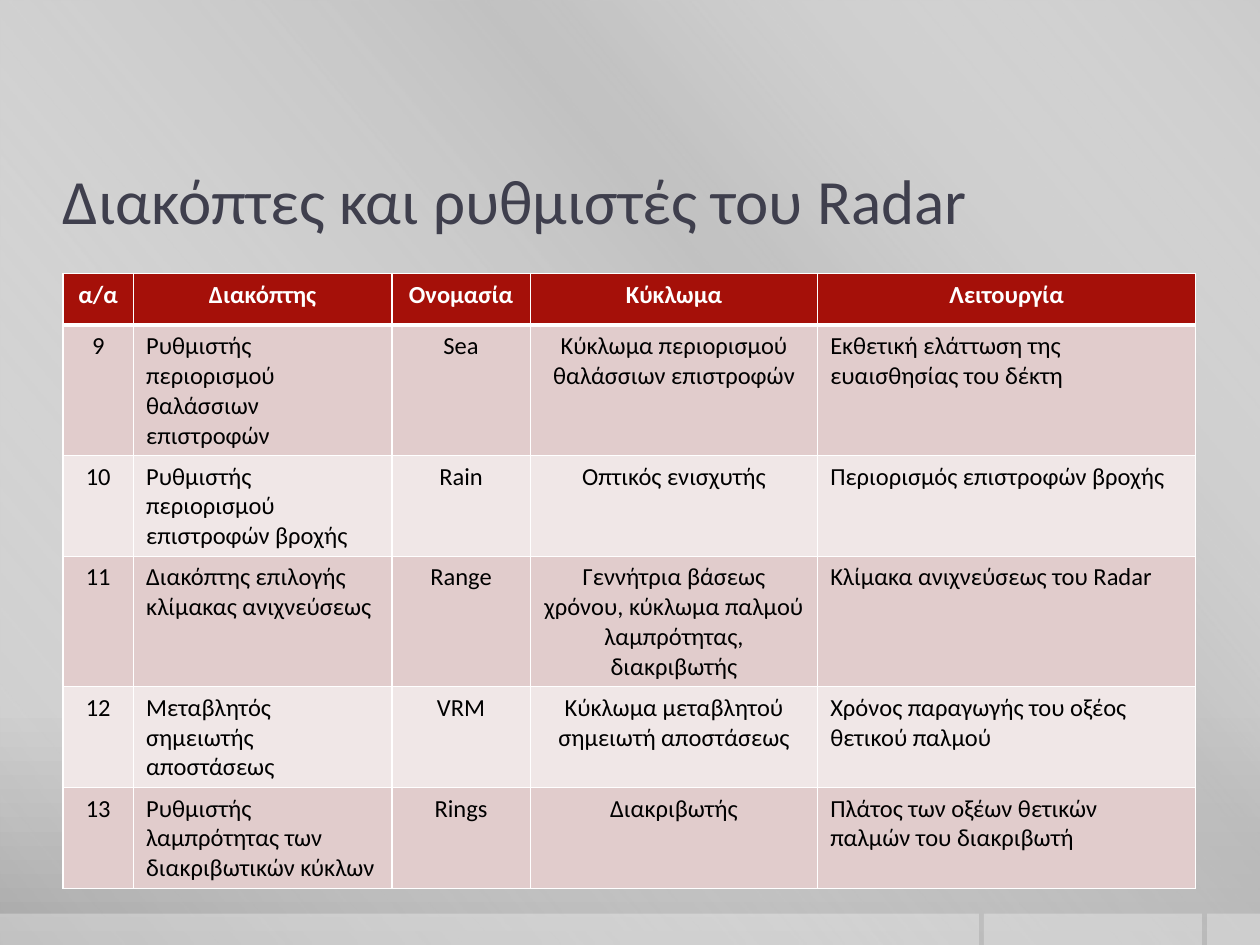
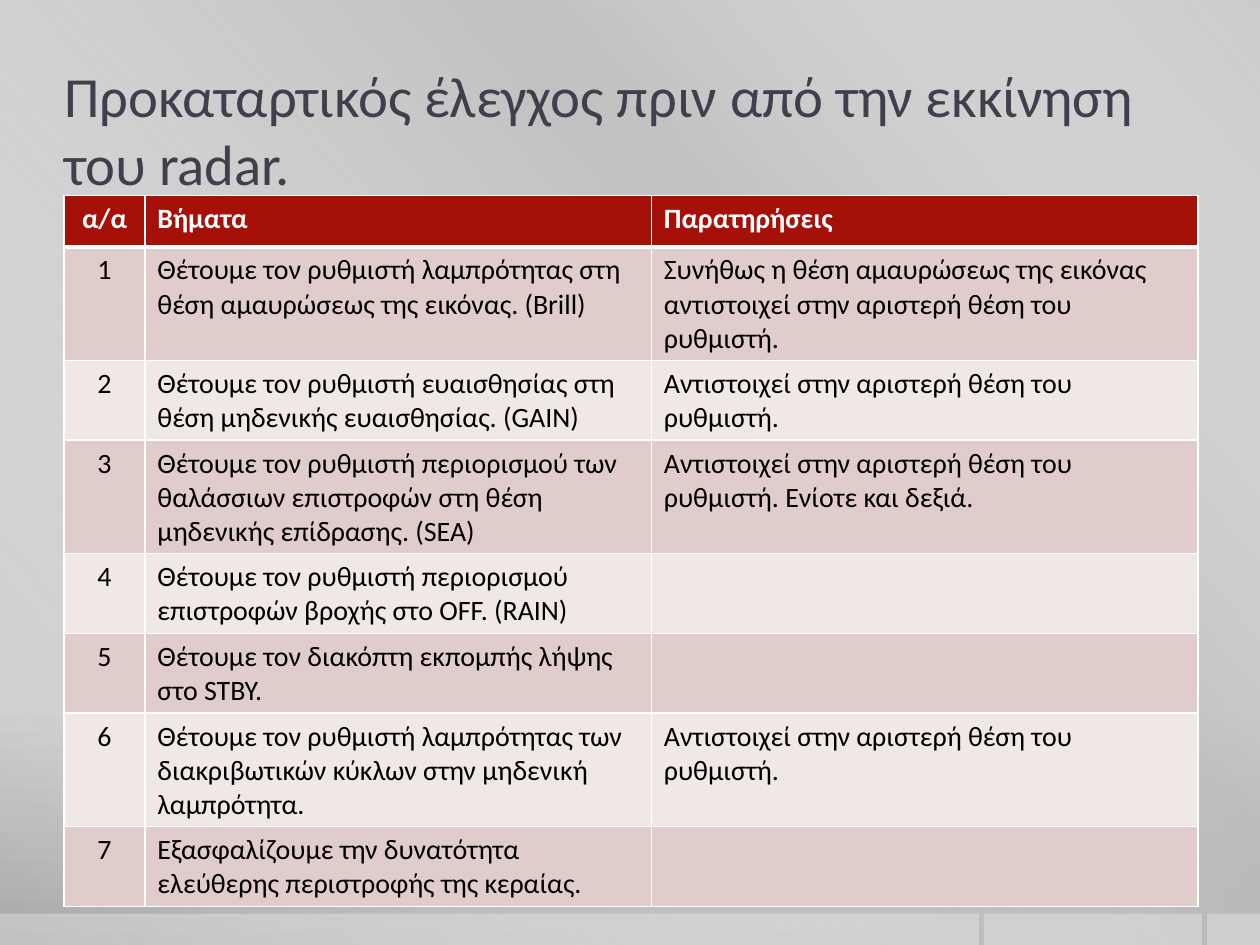
from lxml import etree
from pptx import Presentation
from pptx.dml.color import RGBColor
from pptx.enum.shapes import MSO_SHAPE
from pptx.enum.text import MSO_ANCHOR, PP_ALIGN
from pptx.oxml.ns import qn
from pptx.util import Inches, Pt

RECTANGLE = MSO_SHAPE.RECTANGLE
MIDDLE = MSO_ANCHOR.MIDDLE
LEFT, CENTER = PP_ALIGN.LEFT, PP_ALIGN.CENTER

FONT = "Calibri"
WHITE, BLACK = "FFFFFF", "000000"
TITLE_COLOR, HEADER_FILL = "3F3F4D", "A51009"
BAND_FILLS = ("E1CCCC", "F0E7E7")
BACKGROUND_STOPS = [(0, "CBCBCB", 100), (76, "C8C8C8", 100), (100, "A7A7A7", 100)]
SHEEN_STOPS = [(0, WHITE, 0), (34, "BFBFBF", 61), (38, "BFBFBF", 76), (100, WHITE, 0)]
FOOTER_BANDS = [(9.58, 0.42), (7.81, 1.73), (0, 7.77)]
ROW_HEIGHT = 0.41

SWITCH_ROWS = [
    ["α/α", "Διακόπτης", "Ονομασία", "Κύκλωμα", "Λειτουργία"],
    ["9", "Ρυθμιστής περιορισμού θαλάσσιων επιστροφών", "Sea",
     "Κύκλωμα περιορισμού θαλάσσιων επιστροφών",
     "Εκθετική ελάττωση της ευαισθησίας του δέκτη"],
    ["10", "Ρυθμιστής περιορισμού επιστροφών βροχής", "Rain",
     "Οπτικός ενισχυτής", "Περιορισμός επιστροφών βροχής"],
    ["11", "Διακόπτης επιλογής κλίμακας ανιχνεύσεως", "Range",
     "Γεννήτρια βάσεως χρόνου, κύκλωμα παλμού λαμπρότητας, διακριβωτής",
     "Κλίμακα ανιχνεύσεως του Radar"],
    ["12", "Μεταβλητός σημειωτής αποστάσεως", "VRM",
     "Κύκλωμα μεταβλητού σημειωτή αποστάσεως",
     "Χρόνος παραγωγής του οξέος θετικού παλμού"],
    ["13", "Ρυθμιστής λαμπρότητας των διακριβωτικών κύκλων", "Rings",
     "Διακριβωτής", "Πλάτος των οξέων θετικών παλμών του διακριβωτή"],
]
LEFT_POSITION = "Αντιστοιχεί στην αριστερή θέση του ρυθμιστή."
CHECK_ROWS = [
    ["α/α", "Βήματα", "Παρατηρήσεις"],
    ["1", "Θέτουμε τον ρυθμιστή λαμπρότητας στη θέση αμαυρώσεως της εικόνας. (Brill)",
     "Συνήθως η θέση αμαυρώσεως της εικόνας αντιστοιχεί στην αριστερή θέση του ρυθμιστή."],
    ["2", "Θέτουμε τον ρυθμιστή ευαισθησίας στη θέση μηδενικής ευαισθησίας. (GAIN)",
     LEFT_POSITION],
    ["3", "Θέτουμε τον ρυθμιστή περιορισμού των θαλάσσιων επιστροφών "
     "στη θέση μηδενικής επίδρασης. (SEA)", LEFT_POSITION + " Ενίοτε και δεξιά."],
    ["4", "Θέτουμε τον ρυθμιστή περιορισμού επιστροφών βροχής στο OFF. (RAIN)", ""],
    ["5", "Θέτουμε τον διακόπτη εκπομπής λήψης στο STBY.", ""],
    ["6", "Θέτουμε τον ρυθμιστή λαμπρότητας των διακριβωτικών κύκλων "
     "στην μηδενική λαμπρότητα.", LEFT_POSITION],
    ["7", "Εξασφαλίζουμε την δυνατότητα ελεύθερης περιστροφής της κεραίας.", ""],
]


def rgb(color):
    return RGBColor.from_string(color)


def add_alpha(color_element, percent):
    etree.SubElement(color_element, qn("a:alpha"), val=str(percent * 1000))


def set_gradient(fill, element, angle, stops):
    fill.gradient()
    fill.gradient_angle = 360 - angle
    stop_list = next(element.iter(qn("a:gsLst")))
    for stop in list(stop_list):
        stop_list.remove(stop)
    for position, color, alpha in stops:
        stop = etree.SubElement(stop_list, qn("a:gs"), pos=str(position * 1000))
        add_alpha(etree.SubElement(stop, qn("a:srgbClr"), val=color), alpha)


def set_border(cell, side, width):
    properties = cell._tc.get_or_add_tcPr()
    line = etree.SubElement(properties, qn(f"a:ln{side}"), w=str(Pt(width)))
    fill = etree.SubElement(line, qn("a:solidFill"))
    etree.SubElement(fill, qn("a:srgbClr"), val=WHITE)


class RadarDeck:
    def __init__(self):
        self.deck = Presentation()
        self.deck.slide_width, self.deck.slide_height = Inches(10), Inches(7.5)
        self.page = None

    def add_page(self):
        self.page = self.deck.slides.add_slide(self.deck.slide_layouts[6])
        set_gradient(self.page.background.fill, self.page.element, 90, BACKGROUND_STOPS)
        sheen = self.add_rectangle(0, 0, 10, 7.5)
        set_gradient(sheen.fill, sheen.element, 140, SHEEN_STOPS)
        for left, width in FOOTER_BANDS:
            band = self.add_rectangle(left, 7.25, width, 0.25)
            band.fill.solid()
            band.fill.fore_color.rgb = rgb(WHITE)
            add_alpha(next(band.element.iter(qn("a:srgbClr"))), 30)

    def add_rectangle(self, left, top, width, height):
        shape = self.page.shapes.add_shape(
            RECTANGLE, Inches(left), Inches(top), Inches(width), Inches(height))
        shape.shadow.inherit = False
        shape.line.fill.background()
        return shape

    def set_text(self, paragraph, text, size, color, bold=False, align=LEFT):
        paragraph.text = text
        paragraph.alignment = align
        font = paragraph.font
        font.name, font.size, font.bold = FONT, Pt(size), bold
        font.color.rgb = rgb(color)

    def add_title(self, text, left, top, size):
        box = self.page.shapes.add_textbox(Inches(left), Inches(top), Inches(9), Inches(1))
        frame = box.text_frame
        frame.word_wrap = True
        frame.vertical_anchor = MIDDLE
        frame.margin_left = frame.margin_right = 0
        self.set_text(frame.paragraphs[0], text, size, TITLE_COLOR)

    def add_table(self, rows, left, top, widths, size, header_aligns, body_aligns):
        table = self.page.shapes.add_table(
            len(rows), len(widths), Inches(left), Inches(top),
            Inches(sum(widths)), Inches(ROW_HEIGHT * len(rows))).table
        for column, width in zip(table.columns, widths):
            column.width = Inches(width)
        for row_index, texts in enumerate(rows):
            header = row_index == 0
            table.rows[row_index].height = Inches(ROW_HEIGHT)
            aligns = header_aligns if header else body_aligns
            fill = HEADER_FILL if header else BAND_FILLS[(row_index - 1) % 2]
            borders = {"L": 1, "R": 1, "T": 3 if row_index == 1 else 1, "B": 3 if header else 1}
            for column_index, (text, align) in enumerate(zip(texts, aligns)):
                cell = table.cell(row_index, column_index)
                for side, width in borders.items():
                    set_border(cell, side, width)
                cell.fill.solid()
                cell.fill.fore_color.rgb = rgb(fill)
                if text:
                    self.set_text(cell.text_frame.paragraphs[0], text, size,
                                  WHITE if header else BLACK, header, align)


def main():
    radar = RadarDeck()

    radar.add_page()
    radar.add_title("Διακόπτες και ρυθμιστές του Radar", 0.5, 1.08, 36)
    radar.add_table(SWITCH_ROWS, 0.5, 2.17, [0.56, 2.05, 1.1, 2.28, 3], 14,
                    [CENTER] * 5, [CENTER, LEFT, CENTER, CENTER, LEFT])

    radar.add_page()
    radar.add_title("Προκαταρτικός έλεγχος πριν από την εκκίνηση του radar.", 0.51, 0.52, 32.4)
    check_aligns = [CENTER, LEFT, LEFT]
    radar.add_table(CHECK_ROWS, 0.51, 1.55, [0.64, 4.02, 4.34], 16,
                    check_aligns, check_aligns)

    radar.deck.save("out.pptx")


if __name__ == "__main__":
    main()
